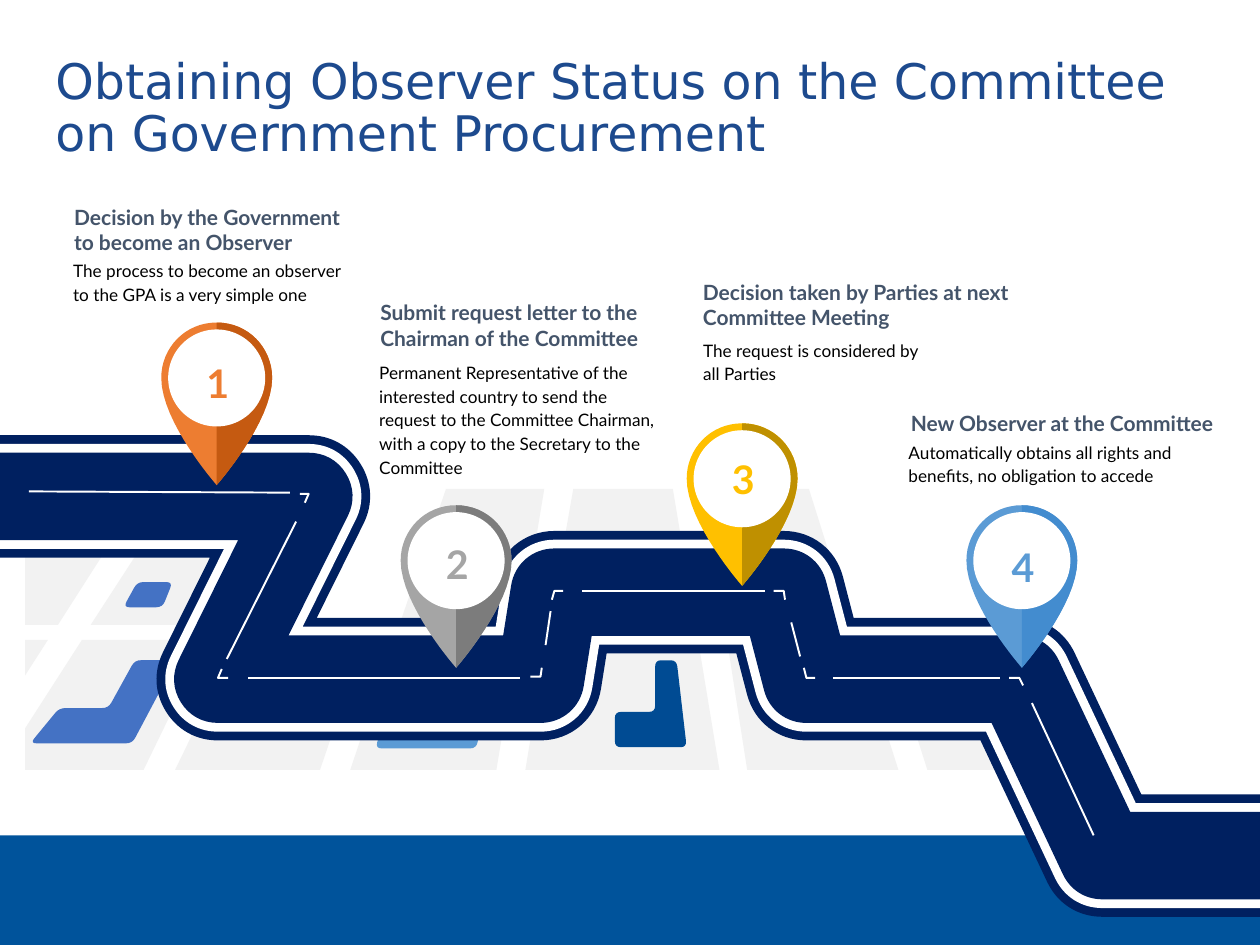
"""Build the road map slide on obtaining observer status."""
from lxml import etree
from pptx import Presentation
from pptx import util as u
from pptx.dml.color import RGBColor
from pptx.enum import shapes, text
from pptx.oxml.ns import qn

rgb = RGBColor.from_string
Inches, Pt = u.Inches, u.Pt
NAVY, WHITE = "002060", "FFFFFF"


def draw(parent, contours, fill=None, line=None, width=1.11):
    fb = None
    for contour in contours:
        pts = [(Inches(x), Inches(y)) for x, y in contour]
        if fb is None:
            fb = parent.build_freeform(*pts[0], scale=1.0)
        else:
            fb.move_to(*pts[0])
        fb.add_line_segments(pts[1:], close=fill is not None)
    sp = fb.convert_to_shape()
    sp.shadow.inherit = False
    if fill:
        sp.fill.solid()
        sp.fill.fore_color.rgb = rgb(fill)
        sp.line.fill.background()
    else:
        sp.fill.background()
        sp.line.color.rgb = rgb(line)
        sp.line.width = Pt(width)
        etree.SubElement(sp.line._get_or_add_ln(), qn("a:round"))


def write(box, words, size, color, bold=False, inset=(0.1, 0.05), spacing=None,
          anchor=text.MSO_ANCHOR.BOTTOM, align=text.PP_ALIGN.LEFT):
    sp = s.shapes.add_textbox(*map(Inches, box))
    tf = sp.text_frame
    tf.word_wrap = True
    tf.vertical_anchor = anchor
    tf.margin_left = tf.margin_right = Inches(inset[0])
    tf.margin_top = tf.margin_bottom = Inches(inset[1])
    p = tf.paragraphs[0]
    p.alignment = align
    p.line_spacing = spacing
    r = p.add_run()
    r.text = words
    r.font.name, r.font.size, r.font.bold = "Lato", Pt(size), bold
    r.font.color.rgb = rgb(color)


prs = Presentation()
prs.slide_width, prs.slide_height = Inches(10), Inches(7.5)
s = prs.slides.add_slide(prs.slide_layouts[5])

title = s.shapes.title
title.left, title.top, title.width, title.height = map(Inches, (0.34, 0.36, 9.15, 1.02))
tf = title.text_frame
tf.auto_size = text.MSO_AUTO_SIZE.NONE
tf.vertical_anchor = text.MSO_ANCHOR.MIDDLE
for i, words in enumerate(["Obtaining Observer Status on the Committee",
                           "on Government Procurement"]):
    p = tf.paragraphs[0] if i == 0 else tf.add_paragraph()
    p.alignment = text.PP_ALIGN.LEFT
    p.line_spacing = 0.9
    p.space_before = Pt(0)
    r = p.add_run()
    r.text = words
    r.font.name, r.font.size = "DejaVu Sans", Pt(28)
    r.font.color.rgb = rgb("1D4A8E")

band = s.shapes.add_shape(shapes.MSO_SHAPE.RECTANGLE, 0, Inches(6.63), Inches(10), Inches(0.87))
band.shadow.inherit = False
band.fill.solid()
band.fill.fore_color.rgb = rgb("00539B")
band.line.fill.background()

city_blocks = [
    [(3.06, 5.28), (4.07, 5.33), (3.94, 6.11), (2.78, 6.11)],
    [(7.09, 5.26), (7.98, 5.46), (8.42, 6.11), (7.36, 6.11)],
    [(5.77, 5.08), (6.27, 5.08), (6.84, 5.2), (7.13, 6.11), (5.93, 6.11)],
    [(4.34, 5.08), (5.54, 5.08), (5.71, 6.11), (4.17, 6.11)],
    [(1.89, 5.08), (2.08, 5.08), (2.03, 5.22), (2.83, 5.26), (2.54, 6.11), (1.39, 6.11)],
    [(0.65, 5.08), (1.64, 5.08), (1.14, 6.11), (0.2, 6.11), (0.2, 5.78)],
    [(0.2, 5.08), (0.38, 5.08), (0.2, 5.36)],
    [(5.57, 3.88), (6.42, 3.88), (6.76, 4.96), (5.75, 4.96)],
    [(4.55, 3.88), (5.34, 3.88), (5.52, 4.96), (4.36, 4.96)],
    [(3.54, 3.88), (4.32, 3.88), (4.14, 4.96), (3.17, 4.96)],
    [(1.42, 3.88), (1.57, 3.88), (2.18, 3.94), (1.69, 4.96), (0.72, 4.96)],
    [(0.31, 3.88), (1.15, 3.88), (0.46, 4.96), (0.2, 4.96), (0.2, 4.02)],
]
draw(s.shapes, city_blocks, "F2F2F2")

buildings = [
    ("5B9BD5", [(3.09, 5.56), (3.86, 5.56), (3.78, 5.94), (2.98, 5.94)]),
    ("4472C4", [(0.24, 5.9), (0.47, 5.62), (0.86, 5.62), (1.07, 5.24), (1.4, 5.24), (1.05, 5.9)]),
    ("004B93", [(5.2, 5.24), (5.37, 5.24), (5.45, 5.93), (4.88, 5.93), (4.88, 5.65), (5.2, 5.65)]),
    ("4472C4", [(1.09, 4.62), (1.37, 4.62), (1.29, 4.82), (0.98, 4.82)]),
]
for color, corners in buildings:
    outline = []
    for i, (x, y) in enumerate(corners):
        ends = []
        for nx, ny in (corners[i - 1], corners[(i + 1) % len(corners)]):
            k = 0.05 / ((nx - x) ** 2 + (ny - y) ** 2) ** 0.5
            ends.append((x + k * (nx - x), y + k * (ny - y)))
        (ax, ay), (bx, by) = ends
        outline += [((1 - t) ** 2 * ax + 2 * t * (1 - t) * x + t * t * bx,
                     (1 - t) ** 2 * ay + 2 * t * (1 - t) * y + t * t * by)
                    for t in (0, 0.25, 0.5, 0.75, 1)]
    draw(s.shapes, [outline], color)

road = [(0, 3.94), (2.45, 3.94), (1.73, 5.39), (4.29, 5.39), (4.4, 4.7),
        (6.22, 4.7), (6.4, 5.39), (8.09, 5.39), (8.75, 6.79), (10.11, 6.79)]
for color, width in [(NAVY, 70), (WHITE, 60), (NAVY, 50)]:
    draw(s.shapes, [road], line=color, width=width)

lane_lines = [
    (0.23, 3.9, 2.3, 3.91), (2.35, 4.14, 1.8, 5.23), (1.97, 5.38, 4.13, 5.38),
    (4.33, 5.12, 4.37, 4.85), (4.62, 4.69, 6.07, 4.69), (6.28, 4.94, 6.35, 5.21),
    (6.61, 5.38, 7.94, 5.38), (8.19, 5.58, 8.68, 6.63),
]
for ends in lane_lines:
    c = s.shapes.add_connector(shapes.MSO_CONNECTOR.STRAIGHT, *map(Inches, ends))
    c.line.color.rgb = rgb(WHITE)
    c.line.width = Pt(1.11)
    etree.SubElement(c._element.spPr, qn("a:effectLst"))

lane_turns = [
    [(2.38, 3.92), (2.45, 3.92), (2.42, 3.99)], [(1.76, 5.31), (1.73, 5.38), (1.81, 5.38)],
    [(4.21, 5.37), (4.29, 5.37), (4.3, 5.3)], [(4.38, 4.76), (4.4, 4.69), (4.47, 4.69)],
    [(6.14, 4.69), (6.22, 4.69), (6.23, 4.76)], [(6.38, 5.3), (6.4, 5.38), (6.47, 5.38)],
    [(8.01, 5.38), (8.09, 5.38), (8.12, 5.44)],
]
for turn in lane_turns:
    draw(s.shapes, [turn], line=WHITE)

half_pin = []
for curve in ([(0, 0), (0.25, 0), (0.44, 0.2), (0.44, 0.44)],
              [(0.44, 0.44), (0.44, 0.79), (0, 1.29), (0, 1.29)]):
    for t in [i / 16 for i in range(17)]:
        weights = [(1 - t) ** 3, 3 * t * (1 - t) ** 2, 3 * t * t * (1 - t), t ** 3]
        half_pin.append(tuple(sum(w * pt[axis] for w, pt in zip(weights, curve))
                              for axis in (0, 1)))

pins = [
    ("1", 1.72, 2.56, 2.8, "ED7D31", "C55A11"),
    ("2", 3.62, 4.01, 4.24, "A5A5A5", "7C7C7C"),
    ("3", 5.89, 3.36, 3.56, "FFC000", "BF9000"),
    ("4", 8.11, 4.01, 4.26, "5B9BD5", "438CCF"),
]
for number, x, y, number_top, light, dark in pins:
    pin = s.shapes.add_group_shape().shapes
    right = [(x + dx, y + dy) for dx, dy in half_pin]
    left = [(x - dx, y + dy) for dx, dy in reversed(half_pin)]
    draw(pin, [right + left], light)
    draw(pin, [right], dark)
    face = pin.add_shape(shapes.MSO_SHAPE.OVAL, Inches(x - 0.385), Inches(y + 0.055),
                         Inches(0.77), Inches(0.77))
    face.shadow.inherit = False
    face.fill.solid()
    face.fill.fore_color.rgb = rgb(WHITE)
    face.line.fill.background()
    write((x - 0.17, number_top, 0.36, 0.48), number, 22.5, light, True, (0, 0.05),
          anchor=text.MSO_ANCHOR.TOP, align=text.PP_ALIGN.CENTER)

steps = [
    ((0.49, 1.57, 2.39, 0.5), "Decision by the Government to become an Observer",
     (0.49, 1.99, 2.35, 0.47), "The process to become an observer to the GPA is a very simple one"),
    ((2.92, 2.33, 2.35, 0.5), "Submit request letter to the Chairman of the Committee",
     (2.92, 2.77, 2.46, 1.06), "Permanent Representative of the interested country to send the "
     "request to the Committee Chairman, with a copy to the Secretary to the Committee"),
    ((5.48, 2.17, 2.65, 0.5), "Decision taken by Parties at next Committee Meeting",
     (5.49, 2.62, 1.92, 0.47), "The request is considered by all Parties"),
    ((7.13, 3.21, 2.65, 0.3), "New Observer at the Committee",
     (7.12, 3.43, 2.55, 0.47), "Automatically obtains all rights and benefits, "
     "no obligation to accede"),
]
for head_box, heading, body_box, body in steps:
    write(head_box, heading, 12, "44546A", True)
    write(body_box, body, 9.8, "000000", inset=(0.09, 0.04), spacing=Pt(13.5))

prs.save("out.pptx")
